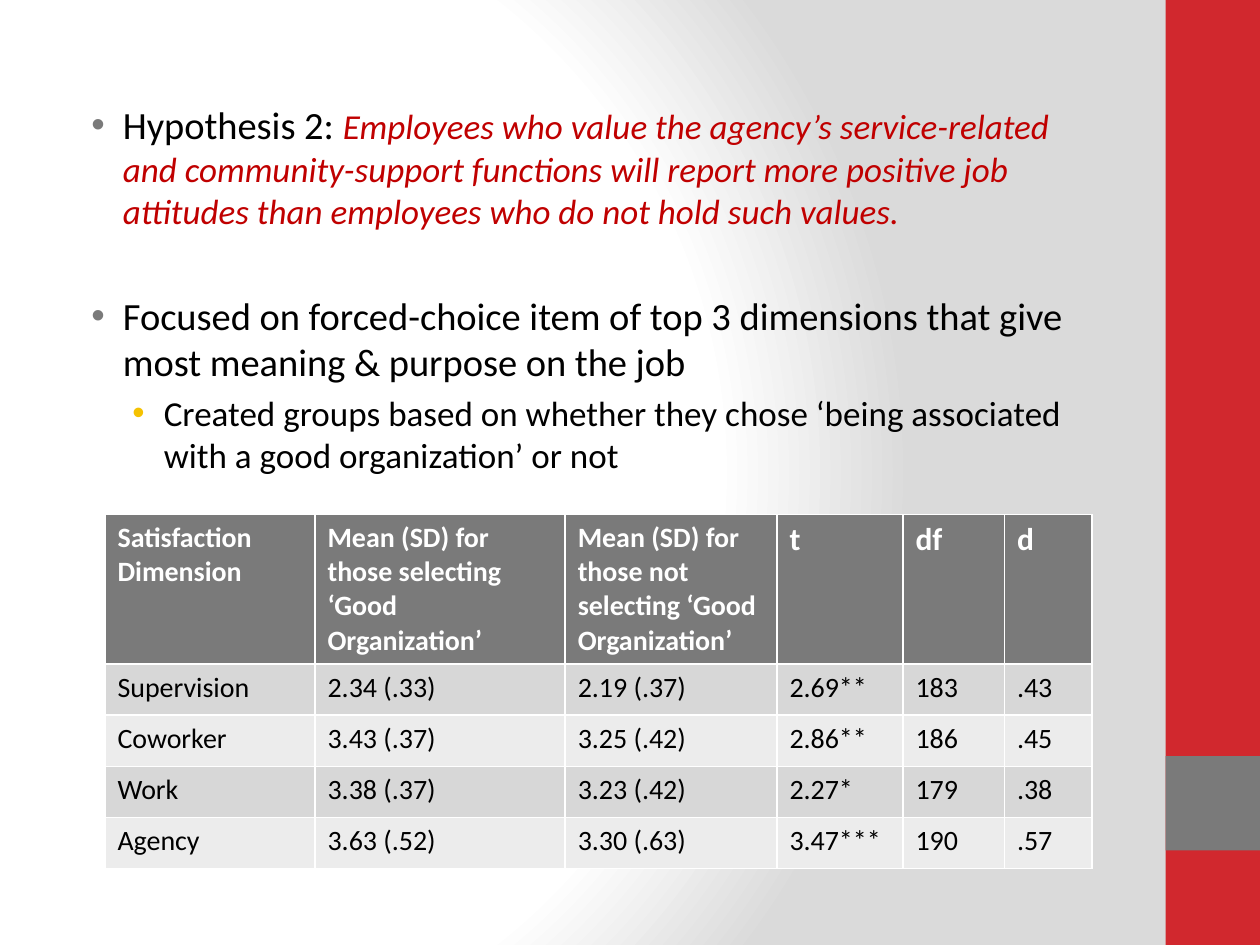
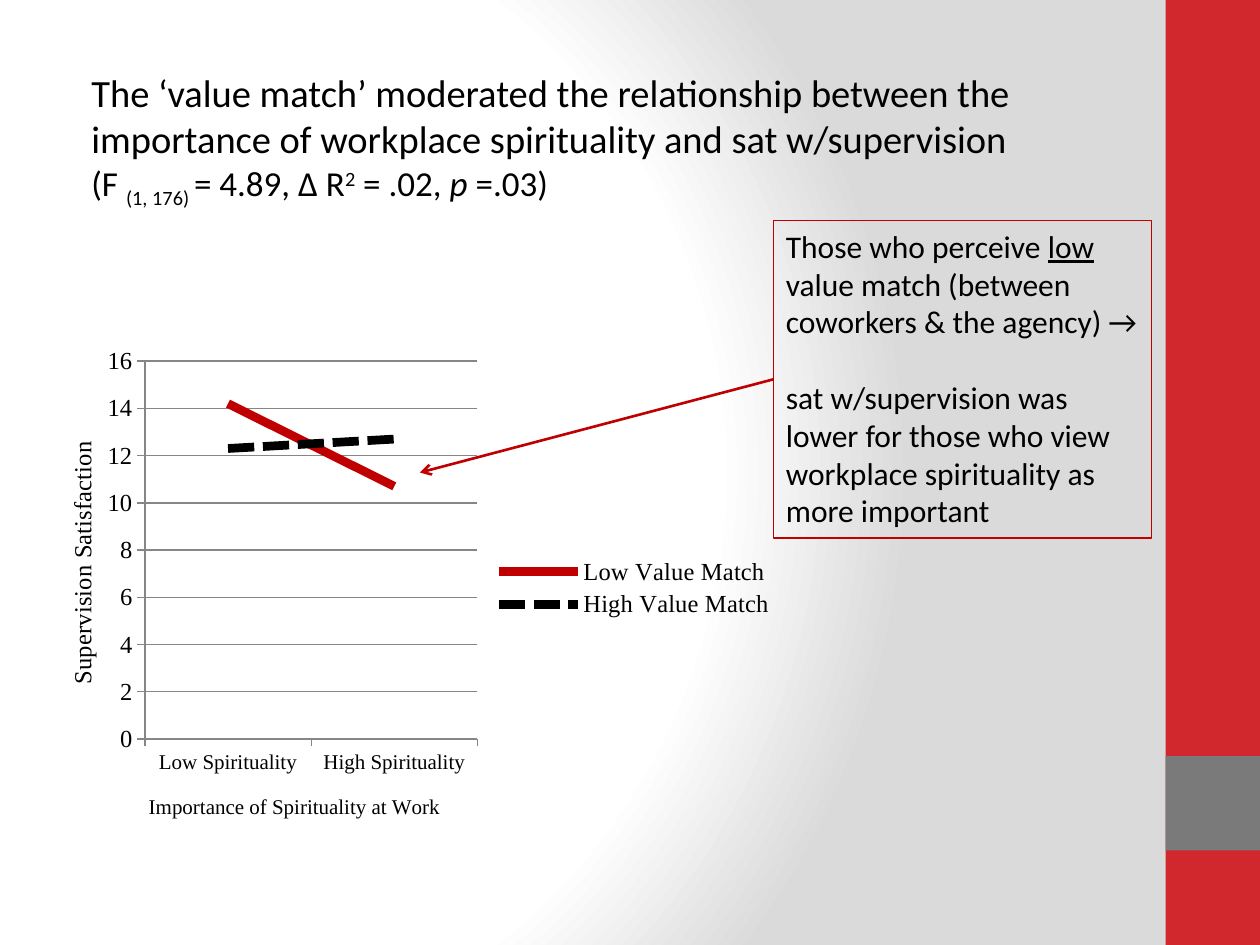
from dataclasses import dataclass
from typing import Optional

from lxml.etree import SubElement
from pptx import Presentation
from pptx.chart.data import CategoryChartData
from pptx.dml.color import RGBColor
from pptx.enum.chart import XL_CHART_TYPE as Kind, XL_LEGEND_POSITION as Side
from pptx.enum.dml import MSO_LINE as Dash
from pptx.enum.shapes import MSO_CONNECTOR as Link, MSO_SHAPE as Form
from pptx.enum.text import MSO_AUTO_SIZE as Fit
from pptx.oxml import parse_xml
from pptx.oxml.ns import nsdecls, qn
from pptx.util import Pt

HUES = {
    "white": "FFFFFF", "black": "000000", "red": "D1282E", "grey": "7A7A7A",
    "deep": "C00000", "gold": "F5C201", "fade": "DADADA", "grid": "868686",
    "dark": "D7D7D7", "light": "ECECEC",
}
SANS, SERIF = "Calibri", "Times New Roman"


@dataclass
class Band:
    top: float
    high: float
    hue: str


@dataclass
class Bit:
    text: str
    size: float = 20
    hue: str = "black"
    slant: bool = False
    under: bool = False
    base: int = 0


@dataclass
class Item:
    bits: list[Bit]
    level: int = 0
    left: float = 27
    hang: float = -18
    dot: Optional[str] = "grey"
    gap: Optional[float] = None


@dataclass
class Trend:
    name: str
    vals: tuple[float, ...]
    hue: str
    dash: Optional[Dash] = None


BANDS = [Band(0, 540, "red"), Band(432, 54, "grey")]
WIDTHS = [120, 143, 121, 72, 58, 50]
HEAD = ["Satisfaction Dimension", "Mean (SD) for those selecting ‘Good Organization’",
        "Mean (SD) for those not selecting ‘Good Organization’", "t", "df", "d"]
ROWS = [
    ["Supervision", "2.34 (.33)", "2.19 (.37)", "2.69**", "183", ".43"],
    ["Coworker", "3.43 (.37)", "3.25 (.42)", "2.86**", "186", ".45"],
    ["Work", "3.38 (.37)", "3.23 (.42)", "2.27*", "179", ".38"],
    ["Agency", "3.63 (.52)", "3.30 (.63)", "3.47***", "190", ".57"],
]
POINTS = [
    Item([Bit("Hypothesis 2: ", 22),
          Bit("Employees who value the agency’s service-related and community-support "
              "functions will report more positive job attitudes than employees who do "
              "not hold such values.", hue="deep", slant=True)]),
    Item([Bit("Focused on forced-choice item of top 3 dimensions that give most meaning "
              "& purpose on the job", 22)], gap=35),
    Item([Bit("Created groups based on whether they chose ‘being associated with a good "
              "organization’ or not")], level=1, left=50.4, dot="gold"),
]
RESULT = Item([
    Bit("The ‘value match’ moderated the relationship between the importance of "
        "workplace spirituality and sat w/supervision \n", 22),
    Bit("(F "), Bit("(1, 176) ", base=-25000), Bit("= 4.89, Δ R"), Bit("2", base=30000),
    Bit(" = .02, "), Bit("p", slant=True), Bit(" =.03)"),
], left=9, hang=0, dot=None)
NOTE = [
    Bit("Those who perceive ", 18), Bit("low", 18, under=True),
    Bit(" value match (between coworkers & the agency) → \nsat w/supervision was lower "
        "for those who view workplace spirituality as more important", 18),
]
TRENDS = [
    Trend("Low Value Match", (14.2, 10.7), "deep"),
    Trend("High Value Match", (12.3, 12.7), "black", Dash.SQUARE_DOT),
]


def tint(name: str) -> RGBColor:
    return RGBColor.from_string(HUES[name])


def ink(font, size: float, face: str = SANS, hue: str = "black", bold: bool = False,
        slant: bool = False, under: bool = False) -> None:
    font.size, font.name = Pt(size), face
    font.bold, font.italic, font.underline = bold, slant, under
    font.color.rgb = tint(hue)


def write(para, text: str, base: int = 0, **look) -> None:
    for num, part in enumerate(text.split("\n")):
        if num:
            para.add_line_break()
        if part:
            run = para.add_run()
            run.text = part
            ink(run.font, **look)
            if base:
                run.font._element.set("baseline", str(base))


def spell(para, bits: list[Bit]) -> None:
    for bit in bits:
        write(para, bit.text, base=bit.base, size=bit.size, hue=bit.hue,
              slant=bit.slant, under=bit.under)


def list_out(slide, top: float, items: list[Item]) -> None:
    title, body = slide.placeholders
    title.element.getparent().remove(title.element)
    body.left, body.top, body.width, body.height = Pt(36), Pt(top), Pt(600), Pt(450)
    frame = body.text_frame
    frame.auto_size = Fit.NONE
    for num, item in enumerate(items):
        para = frame.add_paragraph() if num else frame.paragraphs[0]
        para.level = item.level
        if item.gap:
            para.space_before = Pt(item.gap)
        props = para._p.get_or_add_pPr()
        props.set("marL", str(Pt(item.left)))
        props.set("indent", str(Pt(item.hang)))
        if item.dot:
            shade = SubElement(props, qn("a:buClr"))
            SubElement(shade, qn("a:srgbClr"), val=HUES[item.dot])
            SubElement(props, qn("a:buFont"), typeface="Arial")
            SubElement(props, qn("a:buChar"), char="•")
        else:
            SubElement(props, qn("a:buNone"))
        spell(para, item.bits)


def dress(master, slide) -> None:
    fill = master.background.fill
    fill.solid()
    solid = master.element.find(".//" + qn("p:bgPr")).find(qn("a:solidFill"))
    stops = "".join(
        f'<a:gs pos="{pos}000"><a:srgbClr val="{HUES[hue]}"/></a:gs>'
        for pos, hue in ((0, "white"), (75, "white"), (100, "fade")))
    solid.getparent().replace(solid, parse_xml(
        f'<a:gradFill {nsdecls("a")} rotWithShape="1"><a:gsLst>{stops}</a:gsLst>'
        '<a:path path="circle"><a:fillToRect l="20000" t="50000" r="100000" b="50000"/>'
        '</a:path></a:gradFill>'))
    tree = master.element.find(".//" + qn("p:spTree"))
    for band in BANDS:
        box = slide.shapes.add_shape(Form.RECTANGLE, Pt(666), Pt(band.top),
                                     Pt(54), Pt(band.high))
        box.shadow.inherit = False
        box.fill.solid()
        box.fill.fore_color.rgb = tint(band.hue)
        box.line.fill.background()
        tree.append(box.element)


def add_grid(slide) -> None:
    rows = [HEAD, *ROWS]
    table = slide.shapes.add_table(len(rows), len(HEAD), Pt(60), Pt(294),
                                   Pt(sum(WIDTHS)), Pt(201)).table
    for col, wide in zip(table.columns, WIDTHS):
        col.width = Pt(wide)
    for r, row in enumerate(rows):
        table.rows[r].height = Pt(29.2 if r else 84.2)
        back = ("light", "dark")[r % 2] if r else "grey"
        for c, text in enumerate(row):
            cell = table.cell(r, c)
            cell.fill.solid()
            cell.fill.fore_color.rgb = tint(back)
            write(cell.text_frame.paragraphs[0], text, bold=not r,
                  size=18 if not r and c > 2 else 16, hue="black" if r else "white")


def place(node, index: int, **spots: float) -> None:
    old = node.find(qn("c:layout"))
    if old is not None:
        node.remove(old)
    modes = '<c:xMode val="edge"/><c:yMode val="edge"/>'
    vals = "".join(f'<c:{key} val="{val}"/>' for key, val in spots.items())
    inner = '<c:layoutTarget val="inner"/>' if "w" in spots else ""
    node.insert(index, parse_xml(
        f'<c:layout {nsdecls("c")}><c:manualLayout>{inner}{modes}{vals}'
        '</c:manualLayout></c:layout>'))


def set_axis(axis, text: str, size: float, x: float, y: float) -> None:
    write(axis.axis_title.text_frame.paragraphs[0], text, size=size, face=SERIF)
    place(axis.axis_title._element, 1, x=x, y=y)
    ink(axis.tick_labels.font, size, SERIF)
    axis.format.line.color.rgb = tint("grid")


def add_plot(slide) -> None:
    data = CategoryChartData()
    data.categories = ["Low Spirituality", "High Spirituality"]
    for trend in TRENDS:
        data.add_series(trend.name, trend.vals)
    chart = slide.shapes.add_chart(Kind.LINE, Pt(18), Pt(192), Pt(432), Pt(288), data).chart
    ink(chart.font, 18)
    chart.has_title = False
    chart.has_legend = True
    chart.legend.position = Side.RIGHT
    chart.legend.include_in_layout = False
    ink(chart.legend.font, 14, SERIF)
    set_axis(chart.category_axis, "Importance of Spirituality at Work", 12, 0.15, 0.9)
    scale = chart.value_axis
    set_axis(scale, "Supervision Satisfaction", 14, 0.04, 0.2)
    scale.minimum_scale, scale.maximum_scale, scale.major_unit = 0, 16, 2
    scale.major_gridlines.format.line.color.rgb = tint("grid")
    place(chart._chartSpace.find(".//" + qn("c:plotArea")), 0, x=0.15, y=0.05, w=0.44, h=0.75)
    chart.plots[0].vary_by_categories = False
    for line, trend in zip(chart.plots[0].series, TRENDS):
        line.smooth = False
        pen = line.format.line
        pen.width = Pt(5)
        pen.color.rgb = tint(trend.hue)
        if trend.dash:
            pen.dash_style = trend.dash


def add_note(slide) -> None:
    box = slide.shapes.add_textbox(Pt(442), Pt(126), Pt(216), Pt(181.5))
    box.line.color.rgb = tint("deep")
    box.line.width = Pt(0.75)
    frame = box.text_frame
    frame.word_wrap = True
    frame.auto_size = Fit.SHAPE_TO_FIT_TEXT
    spell(frame.paragraphs[0], NOTE)
    arrow = slide.shapes.add_connector(Link.STRAIGHT, Pt(442), Pt(216.75), Pt(240), Pt(270))
    arrow.line.color.rgb = tint("deep")
    arrow.line.width = Pt(1.5)
    SubElement(arrow.line._get_or_add_ln(), qn("a:tailEnd"), type="arrow")
    SubElement(arrow._element.spPr, qn("a:effectLst"))


def main() -> None:
    deck = Presentation()
    deck.slide_width, deck.slide_height = Pt(720), Pt(540)
    first, second = (deck.slides.add_slide(deck.slide_layouts[1]) for _ in range(2))
    dress(deck.slide_master, first)
    list_out(first, 54, POINTS)
    add_grid(first)
    list_out(second, 36, [RESULT])
    add_plot(second)
    add_note(second)
    deck.save("out.pptx")


if __name__ == "__main__":
    main()
